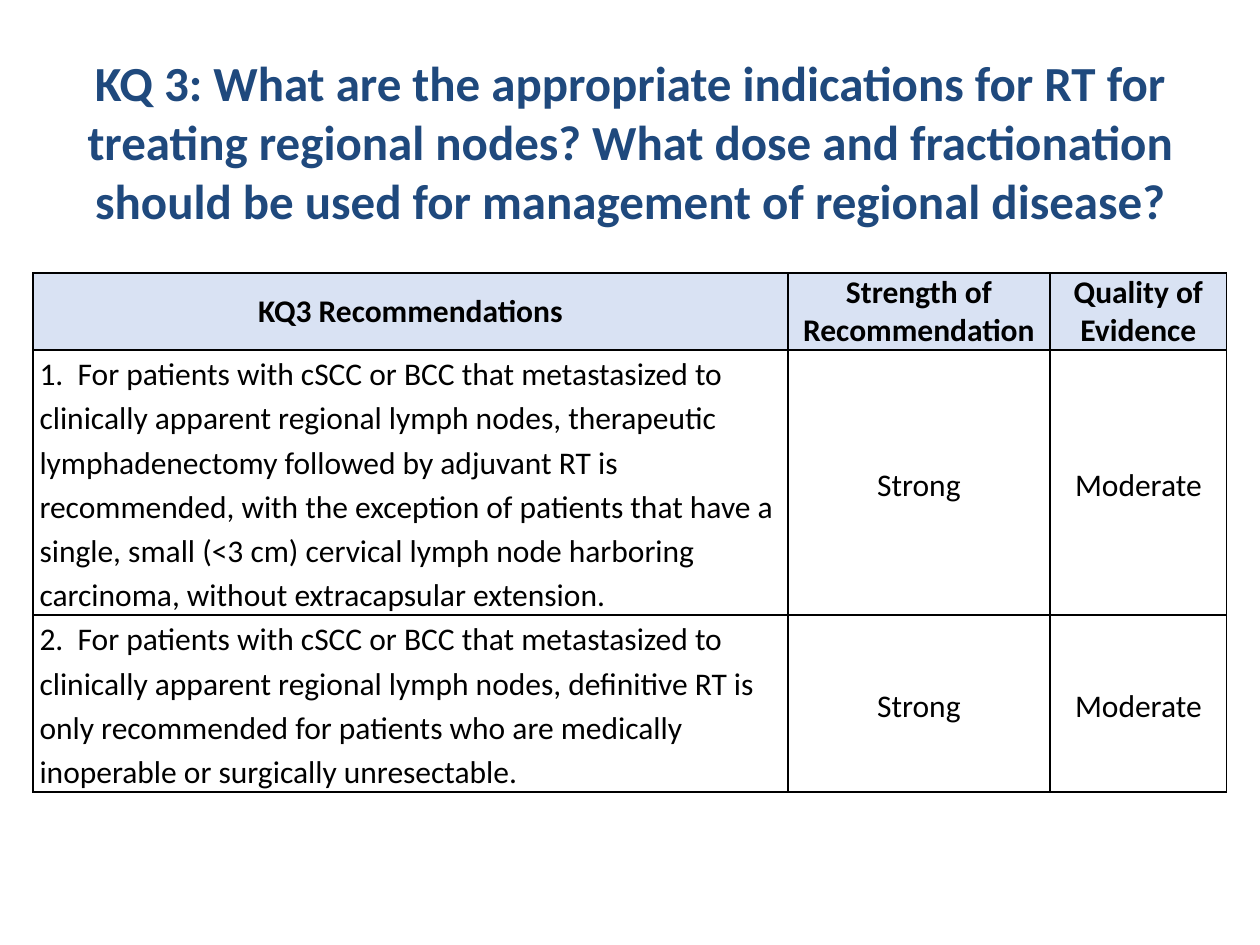
from lxml.etree import SubElement
from pptx import Presentation
from pptx.dml.color import RGBColor
from pptx.enum.text import MSO_ANCHOR, PP_ALIGN
from pptx.oxml.ns import qn
from pptx.util import Pt

COLORS = {"title": "1F497D", "text": "000000", "border": "000000", "header": "D9E2F3"}
FONT = "Calibri"

TITLE = (
    "KQ 3: What are the appropriate indications for RT for treating regional nodes? "
    "What dose and fractionation should be used for management of regional disease?"
)
RECOMMENDATIONS = [
    ("KQ3 Recommendations", "Strength of Recommendation", "Quality of Evidence"),
    (
        "1.  For patients with cSCC or BCC that metastasized to clinically apparent "
        "regional lymph nodes, therapeutic lymphadenectomy followed by adjuvant RT is "
        "recommended, with the exception of patients that have a single, small (<3 cm) "
        "cervical lymph node harboring carcinoma, without extracapsular extension.",
        "Strong",
        "Moderate",
    ),
    (
        "2.  For patients with cSCC or BCC that metastasized to clinically apparent "
        "regional lymph nodes, definitive RT is only recommended for patients who are "
        "medically inoperable or surgically unresectable.",
        "Strong",
        "Moderate",
    ),
]
COLUMN_WIDTHS = (431.2, 149.9, 100.9)
ROW_HEIGHTS = (44, 151.5, 101)


def format_text(paragraph, size, color, bold, align):
    paragraph.alignment = align
    for run in paragraph.runs:
        run.font.name = FONT
        run.font.size = Pt(size)
        run.font.bold = bold
        run.font.color.rgb = RGBColor.from_string(COLORS[color])


def add_borders(cell):
    properties = cell._tc.get_or_add_tcPr()
    for side in ("a:lnL", "a:lnR", "a:lnT", "a:lnB"):
        line = SubElement(properties, qn(side), w=str(Pt(1)))
        fill = SubElement(line, qn("a:solidFill"))
        SubElement(fill, qn("a:srgbClr"), val=COLORS["border"])


def add_title(slide, left, top, width, height):
    title = slide.shapes.add_textbox(Pt(left), Pt(top), Pt(width), Pt(height))
    frame = title.text_frame
    frame.word_wrap = True
    frame.vertical_anchor = MSO_ANCHOR.TOP
    frame.margin_top = Pt(6)
    frame.text = TITLE
    format_text(frame.paragraphs[0], 28, "title", True, PP_ALIGN.CENTER)


def fill_cell(cell, text, is_header, is_statement):
    cell.margin_left = cell.margin_right = Pt(3.6)
    cell.margin_top = cell.margin_bottom = Pt(0)
    cell.vertical_anchor = MSO_ANCHOR.TOP if is_statement else MSO_ANCHOR.MIDDLE
    add_borders(cell)
    if is_header:
        cell.fill.solid()
        cell.fill.fore_color.rgb = RGBColor.from_string(COLORS["header"])
    else:
        cell.fill.background()
    cell.text_frame.text = text
    paragraph = cell.text_frame.paragraphs[0]
    if not is_header:
        paragraph.line_spacing = 1.15
    align = PP_ALIGN.LEFT if is_statement else PP_ALIGN.CENTER
    format_text(paragraph, 18, "text", is_header, align)


def add_recommendations(slide, left, top):
    table = slide.shapes.add_table(
        len(ROW_HEIGHTS), len(COLUMN_WIDTHS), Pt(left), Pt(top),
        Pt(sum(COLUMN_WIDTHS)), Pt(sum(ROW_HEIGHTS)),
    ).table
    for column, width in zip(table.columns, COLUMN_WIDTHS):
        column.width = Pt(width)
    for row_index, texts in enumerate(RECOMMENDATIONS):
        table.rows[row_index].height = Pt(ROW_HEIGHTS[row_index])
        for column_index, text in enumerate(texts):
            is_header = row_index == 0
            is_statement = column_index == 0 and not is_header
            fill_cell(table.cell(row_index, column_index), text, is_header, is_statement)


def main():
    presentation = Presentation()
    presentation.slide_width, presentation.slide_height = Pt(720), Pt(540)
    slide = presentation.slides.add_slide(presentation.slide_layouts[6])
    add_title(slide, 33, 24, 654, 78.5)
    add_recommendations(slide, 19, 156)
    presentation.save("out.pptx")


if __name__ == "__main__":
    main()
